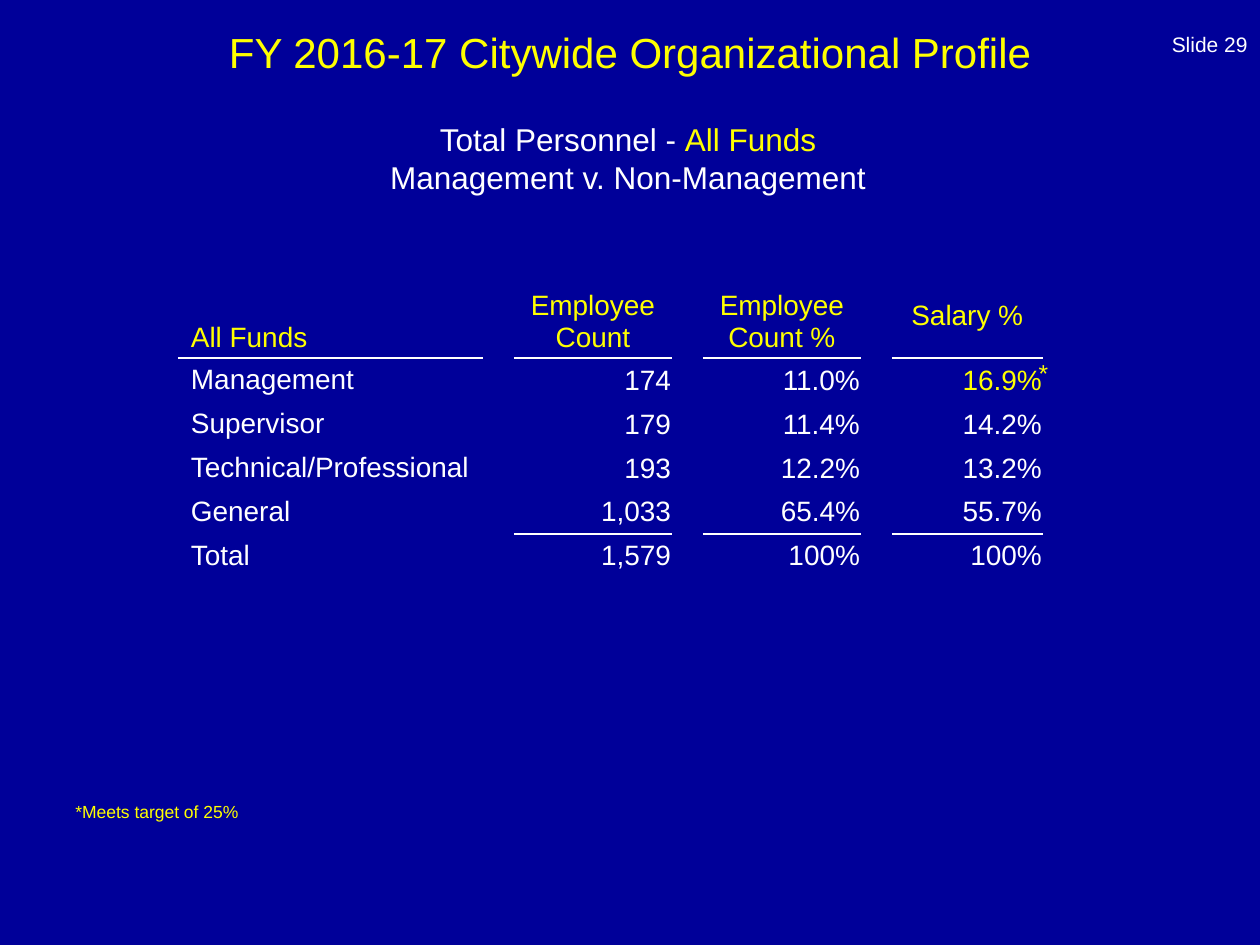
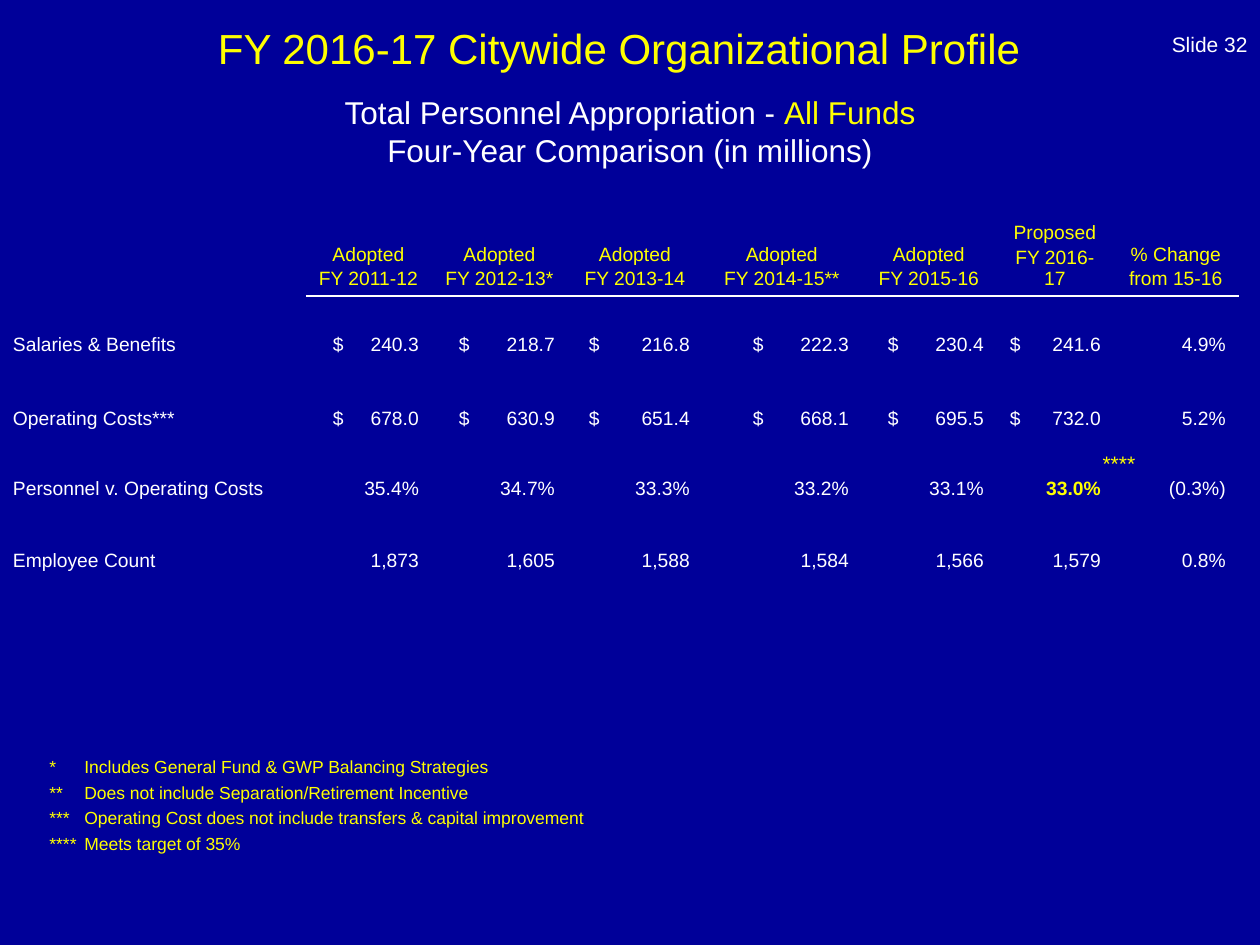
import pptx
import pptx.util
import pptx.dml.color
import pptx.enum.text
import pptx.oxml
import pptx.oxml.ns
from lxml import etree

NAVY = pptx.dml.color.RGBColor(0x00, 0x00, 0x99)
WHITE = pptx.dml.color.RGBColor(0xFF, 0xFF, 0xFF)
YELLOW = pptx.dml.color.RGBColor(0xFF, 0xFF, 0x00)
FONT = "Arial"
EMU_PER_PX = 914400 / 126
ALIGN = pptx.enum.text.PP_ALIGN
ANCHOR = pptx.enum.text.MSO_ANCHOR

PROFILE_TITLE = "FY 2016-17 Citywide Organizational Profile"

PERSONNEL_SUBTITLE = [
    [("Total Personnel - ", WHITE), ("All Funds", YELLOW)],
    "Management v. Non-Management",
]
PERSONNEL_HEADINGS = ["All Funds", "Employee Count", "Employee Count %", "Salary %"]
PERSONNEL_ROWS = [
    ("Management", "174", "11.0%", "16.9%"),
    ("Supervisor", "179", "11.4%", "14.2%"),
    ("Technical/Professional", "193", "12.2%", "13.2%"),
    ("General", "1,033", "65.4%", "55.7%"),
    ("Total", "1,579", "100%", "100%"),
]
PERSONNEL_WIDTHS = [305, 31, 158, 31, 158, 31, 151]
PERSONNEL_HEIGHTS = [85] + [44] * len(PERSONNEL_ROWS)

APPROPRIATION_SUBTITLE = [
    [("Total Personnel Appropriation - ", WHITE), ("All Funds", YELLOW)],
    "Four-Year Comparison (in millions)",
]
APPROPRIATION_HEADINGS = [
    ("Adopted", "FY 2011-12"),
    ("Adopted", "FY 2012-13*"),
    ("Adopted", "FY 2013-14"),
    ("Adopted", "FY 2014-15**"),
    ("Adopted", "FY 2015-16"),
    ("Proposed", "FY 2016-17"),
    ("% Change", "from 15-16"),
]
APPROPRIATION_ROWS = [
    ("Salaries & Benefits", "$240.3", "$218.7", "$216.8", "$222.3", "$230.4", "$241.6", "4.9%"),
    ("Operating Costs***", "$678.0", "$630.9", "$651.4", "$668.1", "$695.5", "$732.0", "5.2%"),
    ("Personnel v. Operating Costs", "35.4%", "34.7%", "33.3%", "33.2%", "33.1%", "33.0%", "(0.3%)"),
    ("Employee Count", "1,873", "1,605", "1,588", "1,584", "1,566", "1,579", "0.8%"),
]
APPROPRIATION_WIDTHS = [305, 126, 136, 135, 159, 135, 117, 125]
APPROPRIATION_HEIGHTS = [86, 66, 74, 70, 72]
DOLLAR_INDENTS = [0, 15, 15, 9, 38, 14, 1, 0]
FOOTNOTES = [
    ("*", "Includes General Fund & GWP Balancing Strategies"),
    ("**", "Does not include Separation/Retirement Incentive"),
    ("***", "Operating Cost does not include transfers & capital improvement"),
    ("****", "Meets target of 35%"),
]


def px(length):
    return pptx.util.Emu(round(length * EMU_PER_PX))


def write_text(frame, paragraphs, size=12, color=WHITE, bold=False,
               align=ALIGN.LEFT, gap=0, tabs=()):
    for index, content in enumerate(paragraphs):
        paragraph = frame.add_paragraph() if index else frame.paragraphs[0]
        if tabs:
            tab_list = etree.SubElement(paragraph._p.get_or_add_pPr(), pptx.oxml.ns.qn("a:tabLst"))
            for position, kind in tabs:
                etree.SubElement(tab_list, pptx.oxml.ns.qn("a:tab"), pos=str(px(position)), algn=kind)
        paragraph.alignment = align
        if index and gap:
            paragraph.space_before = pptx.util.Pt(gap)
        runs = [(content, color)] if isinstance(content, str) else content
        for text, run_color in runs:
            run = paragraph.add_run()
            run.text = text
            run.font.name = FONT
            run.font.size = pptx.util.Pt(size)
            run.font.bold = bold
            run.font.color.rgb = run_color


def add_text(slide, box, paragraphs, anchor=ANCHOR.TOP, **text_format):
    frame = slide.shapes.add_textbox(*map(px, box)).text_frame
    frame.word_wrap = True
    frame.vertical_anchor = anchor
    write_text(frame, paragraphs, **text_format)


def add_profile_slide(presentation, number, title_at, subtitle_at, subtitle):
    slide = presentation.slides.add_slide(presentation.slide_layouts[6])
    slide.background.fill.solid()
    slide.background.fill.fore_color.rgb = NAVY
    add_text(slide, (966, 0, 294, 63), [f"Slide {number}"], anchor=ANCHOR.BOTTOM, align=ALIGN.RIGHT)
    for position, paragraphs, size, color in (
        (title_at, [PROFILE_TITLE], 24, YELLOW),
        (subtitle_at, subtitle, 18, WHITE),
    ):
        add_text(slide, (*position, 1176, 84), paragraphs, anchor=ANCHOR.MIDDLE,
                 size=size, color=color, align=ALIGN.CENTER)
    return slide


def add_plain_table(slide, left, top, widths, heights):
    table = slide.shapes.add_table(len(heights), len(widths), px(left), px(top),
                                   px(sum(widths)), px(sum(heights))).table
    table.first_row = table.horz_banding = False
    for column, width in zip(table.columns, widths):
        column.width = px(width)
    for row, height in zip(table.rows, heights):
        row.height = px(height)
    return table


def rule_cells(table, ruled_below):
    for row_index, row in enumerate(table.rows):
        for column_index, cell in enumerate(row.cells):
            properties = cell._tc.get_or_add_tcPr()
            ruled = {
                "lnT": (row_index - 1, column_index) in ruled_below,
                "lnB": (row_index, column_index) in ruled_below,
            }
            for side in ("lnL", "lnR", "lnT", "lnB"):
                line = etree.SubElement(properties, pptx.oxml.ns.qn(f"a:{side}"), w="12700")
                if ruled.get(side):
                    fill = etree.SubElement(line, pptx.oxml.ns.qn("a:solidFill"))
                    etree.SubElement(fill, pptx.oxml.ns.qn("a:srgbClr"), val=str(WHITE))
                else:
                    etree.SubElement(line, pptx.oxml.ns.qn("a:noFill"))
            cell.fill.background()


def fill_cell(cell, paragraphs, margins, anchor, **text_format):
    cell.margin_left, cell.margin_top, cell.margin_right, cell.margin_bottom = map(px, margins)
    cell.vertical_anchor = anchor
    write_text(cell.text_frame, paragraphs, **text_format)


def add_personnel_table(slide):
    table = add_plain_table(slide, 178, 273, PERSONNEL_WIDTHS, PERSONNEL_HEIGHTS)
    for row_index, values in enumerate([PERSONNEL_HEADINGS] + PERSONNEL_ROWS):
        for value_index, value in enumerate(values):
            heading, label = row_index == 0, value_index == 0
            margins = (13, 5, 13, 5) if heading or label else (1, 1, 1, 0)
            if label:
                align = ALIGN.LEFT
            else:
                align = ALIGN.CENTER if heading else ALIGN.RIGHT
            bottom = heading and value != "Salary %"
            fill_cell(table.cell(row_index, value_index * 2), [value], margins,
                      ANCHOR.BOTTOM if bottom else ANCHOR.MIDDLE, size=16, align=align,
                      color=YELLOW if heading or value == "16.9%" else WHITE)
        for spacer in range(1, len(PERSONNEL_WIDTHS), 2):
            fill_cell(table.cell(row_index, spacer), [], (0, 0, 0, 0), ANCHOR.MIDDLE)
    ruled = {(0, column) for column in (0, 2, 4, 6)} | {(4, column) for column in (2, 4, 6)}
    rule_cells(table, ruled)


def add_appropriation_table(slide):
    margins = (12, 6, 13, 6)
    table = add_plain_table(slide, 1, 210, APPROPRIATION_WIDTHS, APPROPRIATION_HEIGHTS)
    for column, heading in enumerate(APPROPRIATION_HEADINGS, 1):
        fill_cell(table.cell(0, column), heading, margins, ANCHOR.BOTTOM,
                  size=11, color=YELLOW, align=ALIGN.CENTER, gap=2)
    for row_index, values in enumerate(APPROPRIATION_ROWS, 1):
        for column, value in enumerate(values):
            target = value == "33.0%"
            align, tabs = (ALIGN.RIGHT if column else ALIGN.LEFT), ()
            if value.startswith("$"):
                align = ALIGN.LEFT
                inner_width = APPROPRIATION_WIDTHS[column] - margins[0] - margins[2]
                tabs = ((DOLLAR_INDENTS[column], "l"), (inner_width, "r"))
                value = value.replace("$", "\t$\t")
            fill_cell(table.cell(row_index, column), [value], margins, ANCHOR.BOTTOM,
                      size=11, color=YELLOW if target else WHITE, bold=target,
                      align=align, tabs=tabs)
    rule_cells(table, {(0, column) for column in range(1, len(APPROPRIATION_WIDTHS))})


def main():
    presentation = pptx.Presentation()
    presentation.slide_width, presentation.slide_height = px(1260), px(945)

    personnel = add_profile_slide(presentation, 29, (42, 10), (40, 116), PERSONNEL_SUBTITLE)
    add_personnel_table(personnel)
    add_text(personnel, (63, 795, 662, 34), ["*Meets target of 25%"], size=10, color=YELLOW)
    add_text(personnel, (1012, 352, 63, 43), ["*"], size=14, color=YELLOW, align=ALIGN.CENTER)

    appropriation = add_profile_slide(presentation, 32, (31, 6), (42, 89), APPROPRIATION_SUBTITLE)
    add_text(appropriation, (37, 750, 964, 115), ["\t".join(note) for note in FOOTNOTES],
             size=10, color=YELLOW, gap=2.6, tabs=((35, "l"),))
    add_appropriation_table(appropriation)
    add_text(appropriation, (1080, 444, 78, 38), ["****"], color=YELLOW, align=ALIGN.CENTER)

    presentation.save("out.pptx")


if __name__ == "__main__":
    main()
